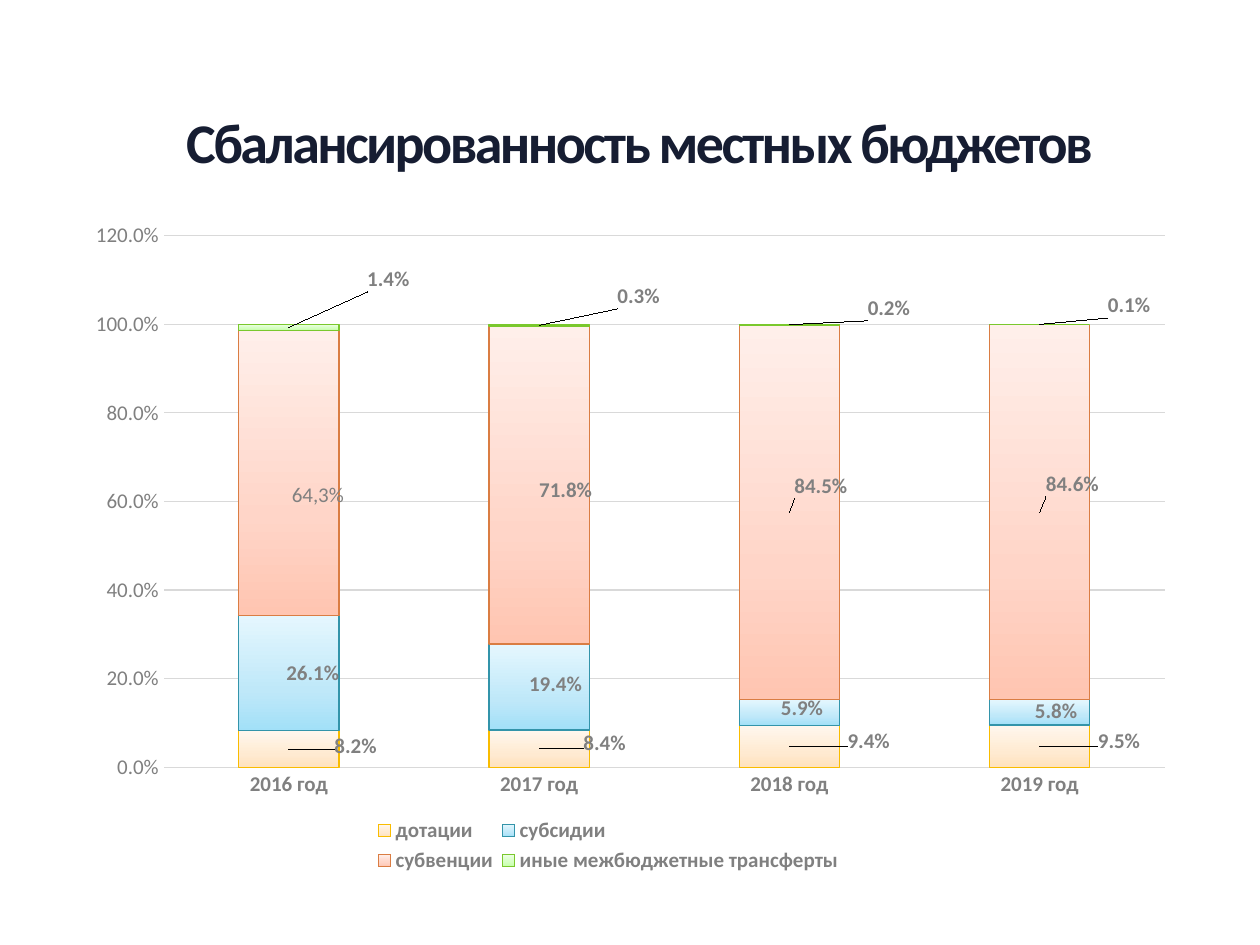
from copy import deepcopy

from lxml import etree
from pptx import Presentation
from pptx.chart.data import CategoryChartData
from pptx.dml.color import RGBColor
from pptx.enum.chart import XL_CHART_TYPE as ChartType
from pptx.enum.chart import XL_LABEL_POSITION as LabelPos
from pptx.enum.chart import XL_LEGEND_POSITION as LegendPos
from pptx.enum.chart import XL_TICK_MARK as TickMark
from pptx.enum.text import MSO_ANCHOR, PP_ALIGN
from pptx.oxml.ns import qn
from pptx.util import Inches, Pt

FONT = "Calibri"
GRAY = RGBColor(0x80, 0x80, 0x80)
GRID = RGBColor(0xD9, 0xD9, 0xD9)
TITLE_COLORS = [RGBColor.from_string(c) for c in ("2E59B0", "161D32", "000000")]

YEARS = ["2016 год", "2017 год", "2018 год", "2019 год"]
SERIES = [
    ("дотации", (0.082, 0.084, 0.094, 0.095), "F9BC00", ("FFE2BD", "FFEAD1", "FFF7EE"),
     ((0.53, -0.02), (0.52, -0.04), (0.63, -0.04), (0.63, -0.04))),
    ("субсидии", (0.261, 0.194, 0.059, 0.058), "3394AA", ("A2E0F8", "BFE8F9", "E5F7FE"),
     ((0.19, 0), (0.13, -0.02), (0.1, -0.03), (0.13, -0.01))),
    ("субвенции", (0.643, 0.718, 0.845, 0.846), "DA7D43", ("FFC5B1", "FFD5C8", "FFEFEA"),
     ((0.23, 0.18), (0.21, 0.04), (0.25, -0.21), (0.26, -0.22))),
    ("иные межбюджетные трансферты", (0.014, 0.003, 0.002, 0.001), "7AC82D",
     ("C4FFA7", "D4FFC0", "EEFFE7"),
     ((0.79, -0.38), (0.79, -0.23), (0.79, -0.13), (0.71, -0.15))),
]


def style_font(font, bold=True):
    font.name = FONT
    font.size = Pt(12)
    font.bold = bold
    font.color.rgb = GRAY


def fill_gradient(fill, colors, middle, angle):
    fill.gradient()
    fill.gradient_angle = angle
    gs = fill.gradient_stops[1]._gs
    gs.addnext(deepcopy(gs))
    for stop, color, position in zip(fill.gradient_stops, colors, (0, middle, 1)):
        stop.color.rgb = color
        stop.position = position


def make_layout(box, **values):
    layout = etree.Element(qn("c:layout"))
    manual = etree.SubElement(layout, qn("c:manualLayout"))
    for name, value in values.items():
        if name in ("x", "w"):
            value = Inches(value) / box[2]
        elif name in ("y", "h"):
            value = Inches(value) / box[3]
        etree.SubElement(manual, qn(f"c:{name}")).set("val", str(value))
    return layout


def place_layout(anchor, layout):
    for old in anchor.getparent().findall(qn("c:layout")):
        anchor.getparent().remove(old)
    anchor.addnext(layout)


def add_title(slide, box):
    sp = slide.shapes.title
    sp.left, sp.top, sp.width, sp.height = box
    tf = sp.text_frame
    tf.text = "Сбалансированность местных бюджетов"
    tf.vertical_anchor = MSO_ANCHOR.MIDDLE
    tf.margin_left = tf.margin_right = tf.margin_top = tf.margin_bottom = 0
    p = tf.paragraphs[0]
    p.alignment = PP_ALIGN.CENTER
    p.line_spacing = 0.9
    font = p.runs[0].font
    font.name, font.size, font.bold = FONT, Pt(32), True
    fill_gradient(font.fill, TITLE_COLORS, 0.49, 270)
    font._element.set("spc", "-150")


def style_axes(chart):
    for axis in (chart.category_axis, chart.value_axis):
        axis.major_tick_mark = axis.minor_tick_mark = TickMark.NONE
        axis.format.line.fill.background()
    style_font(chart.category_axis.tick_labels.font)
    axis = chart.value_axis
    style_font(axis.tick_labels.font, bold=False)
    axis.tick_labels.number_format = "0.0%"
    axis.tick_labels.number_format_is_linked = False
    axis.minimum_scale, axis.maximum_scale, axis.major_unit = 0, 1.2, 0.2
    axis.has_major_gridlines = True
    axis.major_gridlines.format.line.color.rgb = GRID
    axis.major_gridlines.format.line.width = Pt(0.75)


def style_series(series, line, colors, offsets, box):
    fill_gradient(series.format.fill, [RGBColor.from_string(c) for c in colors], 0.35, 90)
    series.format.line.color.rgb = RGBColor.from_string(line)
    series.format.line.width = Pt(0.75)
    labels = series.data_labels
    style_font(labels.font)
    labels.number_format = "0.0%"
    labels.number_format_is_linked = False
    labels.show_value = True
    labels.position = LabelPos.CENTER
    for i, (x, y) in enumerate(offsets):
        label = series.points[i].data_label
        style_font(label.font)
        label.position = LabelPos.CENTER
        dlbl = labels._element.findall(qn("c:dLbl"))[i]
        place_layout(dlbl.find(qn("c:idx")), make_layout(box, x=x, y=y))


def add_budget_chart(slide, box):
    data = CategoryChartData(number_format="0.0%")
    data.categories = YEARS
    for name, values, *_ in SERIES:
        data.add_series(name, values)
    chart = slide.shapes.add_chart(ChartType.COLUMN_STACKED, *box, data).chart
    chart.font.name = FONT
    chart.font.size = Pt(10)
    chart.has_title = False
    style_axes(chart)

    plot = chart.plots[0]
    plot.gap_width, plot.overlap = 150, 100
    plot.vary_by_categories = False
    for series, (_, _, line, colors, offsets) in zip(plot.series, SERIES):
        style_series(series, line, colors, offsets, box)
    tf = plot.series[2].points[0].data_label.text_frame
    tf.text = "64,3%"
    style_font(tf.paragraphs[0].runs[0].font, bold=False)

    chart.has_legend = True
    legend = chart.legend
    legend.position = LegendPos.BOTTOM
    legend.include_in_layout = False
    style_font(legend.font)
    place_layout(legend._element.find(qn("c:legendPos")),
                 make_layout(box, xMode="edge", yMode="edge", x=2.5, y=4.83, w=3.8, h=0.52))
    plot_area = chart._chartSpace.chart.plotArea
    for old in plot_area.findall(qn("c:layout")):
        plot_area.remove(old)
    plot_area.insert(0, make_layout(box, layoutTarget="inner", xMode="edge", yMode="edge",
                                    x=0.87, y=0.25, w=7.95, h=4.22))


def main():
    prs = Presentation()
    prs.slide_width, prs.slide_height = Inches(10), Inches(7.5)
    slide = prs.slides.add_slide(prs.slide_layouts[5])
    add_budget_chart(slide, (Inches(0.43), Inches(1.62), Inches(8.82), Inches(5.35)))
    add_title(slide, (Inches(0.35), Inches(0.76), Inches(9.45), Inches(0.79)))
    prs.save("out.pptx")


if __name__ == "__main__":
    main()
